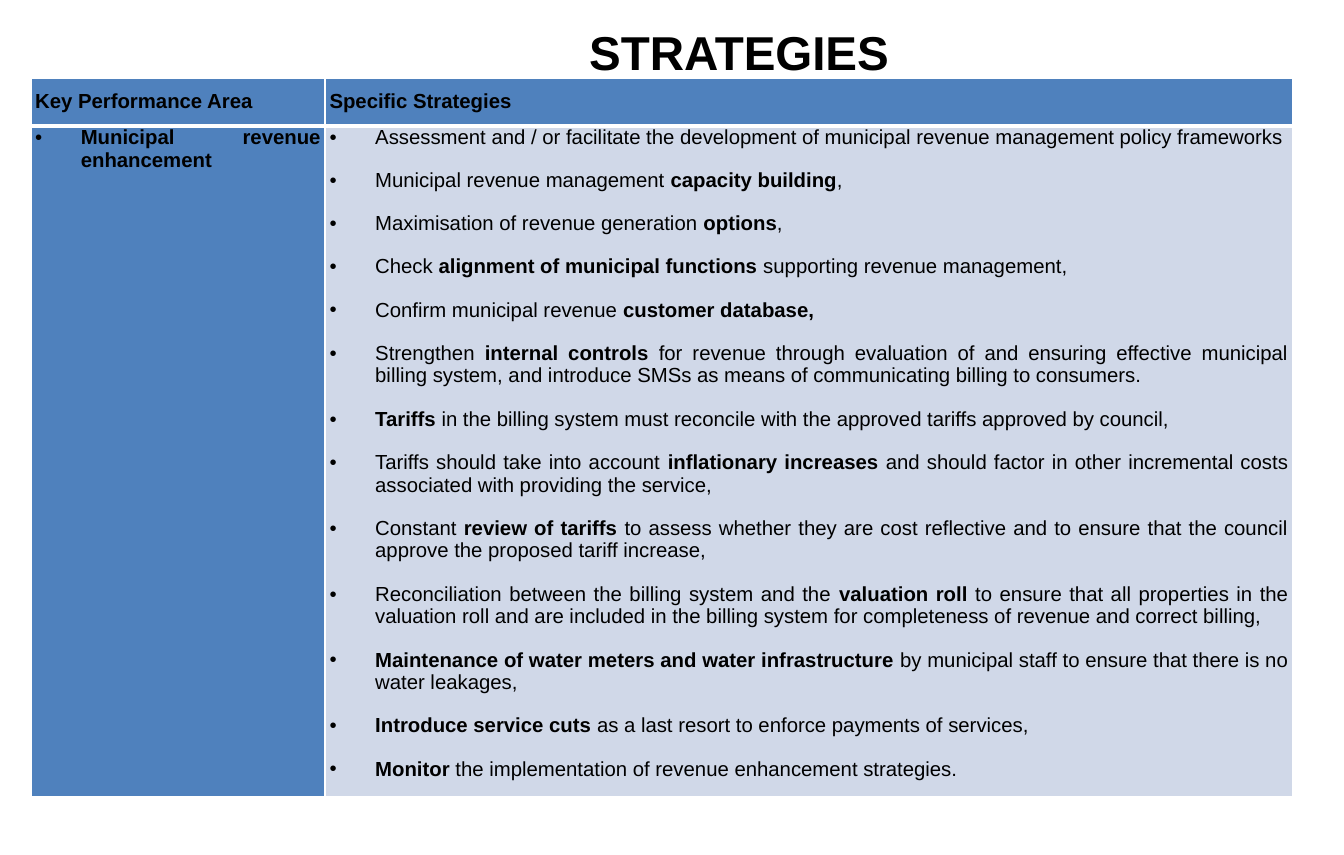
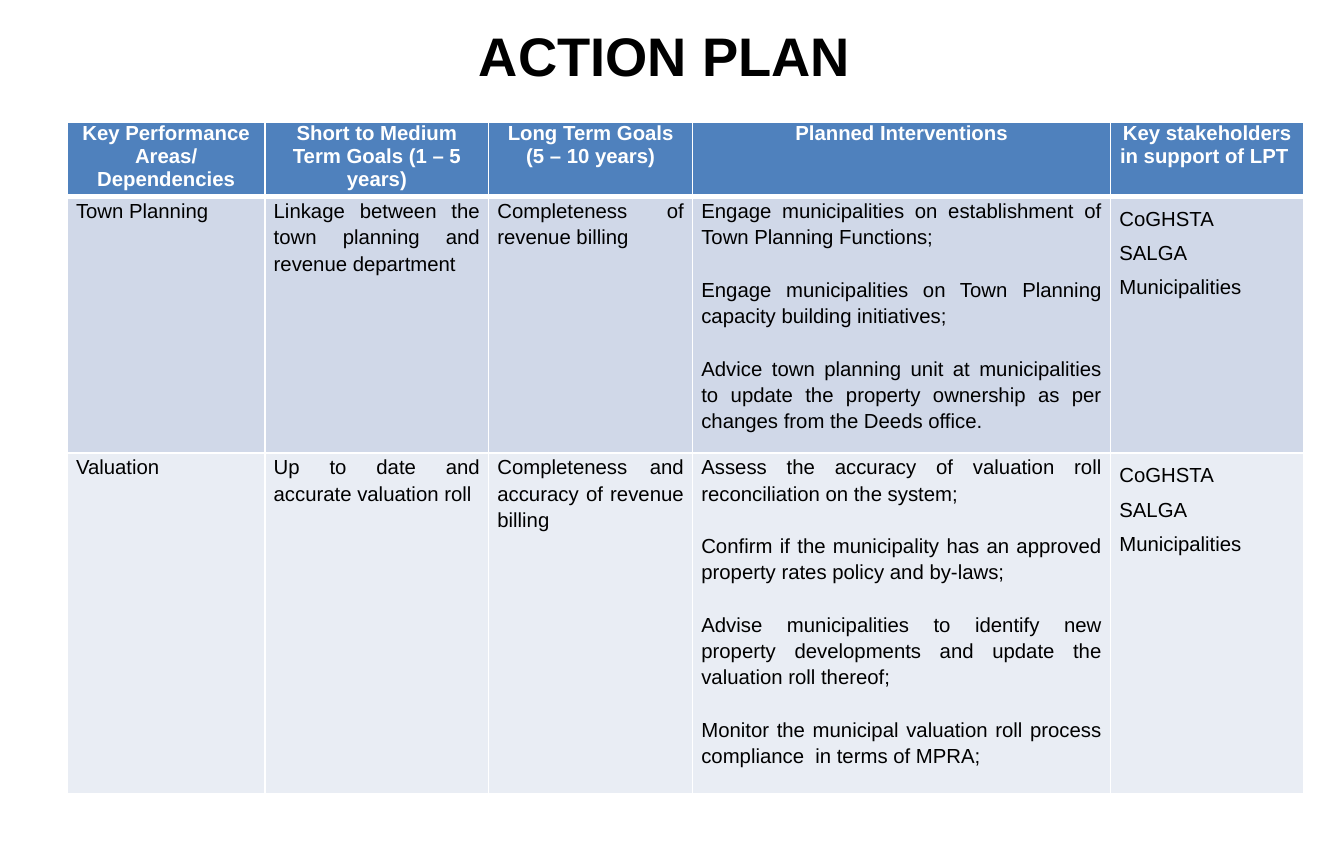
from pptx import Presentation
from pptx import util as u
from pptx.dml import color
from pptx.enum import text
from pptx.oxml import xmlchemy, ns
from lxml import etree

FONT = "Arial"
BLACK, WHITE = "000000", "FFFFFF"
HEADER, BAND, LIGHT_BAND = "4F81BD", "D0D8E8", "E9EDF4"
LEFT, CENTER, JUSTIFY = (text.PP_ALIGN.LEFT, text.PP_ALIGN.CENTER,
                         text.PP_ALIGN.JUSTIFY)
BODY_SIZE = 12

STRATEGIES = [
    "Assessment and / or facilitate the development of municipal revenue "
    "management policy frameworks",
    "Municipal revenue management **capacity building**,",
    "Maximisation of revenue generation **options**,",
    "Check **alignment of municipal functions** supporting revenue management, ",
    "Confirm municipal revenue **customer database,**",
    "Strengthen **internal controls **for revenue through evaluation of and "
    "ensuring effective municipal billing system, and introduce SMSs as means "
    "of communicating billing to consumers.",
    "**Tariffs** in the billing system must reconcile with the approved tariffs "
    "approved by council,",
    "Tariffs should take into account **inflationary increases **and should "
    "factor in other incremental costs associated with providing the service,",
    "Constant **review of tariffs **to assess whether they are cost reflective "
    "and to ensure that the council approve the proposed tariff increase,",
    "Reconciliation between the billing system and the **valuation roll **to "
    "ensure that all properties in the valuation roll and are included in the "
    "billing system for completeness of revenue and correct billing,",
    "**Maintenance of water meters and water infrastructure **by municipal "
    "staff to ensure that there is no water leakages,",
    "**Introduce service cuts **as a last resort to enforce payments of services,",
    "**Monitor **the implementation of revenue enhancement strategies. ",
]

PLAN_HEADS = [
    "Key Performance Areas/ Dependencies",
    "Short to Medium Term Goals (1 – 5 years)",
    "Long Term Goals (5 – 10 years)",
    "Planned Interventions",
    "Key stakeholders in support of LPT ",
]
STAKEHOLDERS = ["CoGHSTA ", "SALGA", "Municipalities"]
PLAN_ROWS = [
    (
        "Town Planning",
        "Linkage between the town planning and revenue department",
        "Completeness of revenue billing",
        [
            "Engage municipalities on establishment of Town Planning Functions;",
            "Engage municipalities on Town Planning capacity building initiatives;",
            "Advice town planning unit at municipalities to update the property "
            "ownership as per changes from the Deeds office.",
        ],
    ),
    (
        "Valuation",
        "Up to date and accurate valuation roll",
        "Completeness and accuracy of revenue billing",
        [
            "Assess the accuracy of valuation roll reconciliation on the system;",
            "Confirm if the municipality has an approved property rates policy "
            "and by-laws;",
            "Advise municipalities to identify new property developments and "
            "update the valuation roll thereof;",
            "Monitor the municipal valuation roll process compliance  in terms "
            "of MPRA;",
        ],
    ),
]


def rgb(value):
    return color.RGBColor.from_string(value)


def add_span(para, words, size, ink, bold):
    span = para.add_run()
    span.text = words
    font = span.font
    font.name, font.size, font.bold = FONT, u.Pt(size), bold
    font.color.rgb = rgb(ink)


def add_bullet(para, indent):
    props = para._p.get_or_add_pPr()
    props.set("marL", str(u.Cm(indent)))
    props.set("indent", str(-u.Cm(indent)))
    etree.SubElement(props, ns.qn("a:buFont")).set("typeface", FONT)
    etree.SubElement(props, ns.qn("a:buChar")).set("char", "•")


def set_borders(cell, top, bottom):
    props = cell._tc.get_or_add_tcPr()
    for side, width in (("L", 1), ("R", 1), ("T", top), ("B", bottom)):
        line = etree.SubElement(props, ns.qn("a:ln" + side), w=str(u.Pt(width)))
        fill = etree.SubElement(line, ns.qn("a:solidFill"))
        etree.SubElement(fill, ns.qn("a:srgbClr"), val=WHITE)


def fill_cell(cell, paras, fill, ink=BLACK, bold=False, align=JUSTIFY,
              spacing=1.0, gap=0, bullet=None):
    cell.fill.solid()
    cell.fill.fore_color.rgb = rgb(fill)
    paras = [paras] if isinstance(paras, str) else paras
    frame = cell.text_frame
    for number, words in enumerate(paras):
        para = frame.add_paragraph() if number else frame.paragraphs[0]
        if bullet:
            add_bullet(para, bullet)
        para.alignment = align
        para.line_spacing = spacing
        para.space_before = u.Pt(gap if number else 0)
        for index, part in enumerate(words.split("**")):
            if part:
                add_span(para, part, BODY_SIZE, ink, bold or index % 2 == 1)


def add_table(page, left, top, widths, heights, inset):
    frame = page.shapes.add_table(
        len(heights), len(widths), u.Cm(left), u.Cm(top),
        u.Cm(sum(widths)), u.Cm(sum(heights)))
    table = frame.table
    table.horz_banding = False
    for column, width in zip(table.columns, widths):
        column.width = u.Cm(width)
    for number, (row, height) in enumerate(zip(table.rows, heights)):
        row.height = u.Cm(height)
        for cell in row.cells:
            cell.margin_left = cell.margin_right = u.Cm(inset)
            cell.margin_top = cell.margin_bottom = 0
            set_borders(cell, 3 if number == 1 else 1, 3 if number == 0 else 1)
    return table


def add_page(deck, title, size, left, top, width, height):
    page = deck.slides.add_slide(deck.slide_layouts[5])
    box = page.shapes.title
    box.left, box.top = u.Cm(left), u.Cm(top)
    box.width, box.height = u.Cm(width), u.Cm(height)
    frame = box.text_frame
    frame.auto_size = text.MSO_AUTO_SIZE.NONE
    frame.vertical_anchor = text.MSO_ANCHOR.MIDDLE
    para = frame.paragraphs[0]
    para.alignment = CENTER
    add_span(para, title, size, BLACK, True)
    return page


def strategies_page(deck):
    page = add_page(deck, "STRATEGIES ", 28, 4.45, 0.43, 22.1, 1.27)
    table = add_table(page, 0.64, 1.63, [6.12, 20.12], [0.99, 13.94], 0.09)
    for column, head in enumerate(["Key Performance Area", "Specific Strategies "]):
        fill_cell(table.cell(0, column), head, HEADER, bold=True, spacing=1.5)
    fill_cell(table.cell(1, 0), "Municipal revenue enhancement ", HEADER,
              bold=True, bullet=0.95)
    fill_cell(table.cell(1, 1), STRATEGIES, BAND, gap=12, bullet=0.95)


def action_plan_page(deck):
    page = add_page(deck, "ACTION PLAN ", 32, 1.4, 0.2, 25.15, 1.9)
    table = add_table(page, 1.4, 2.54, [4.11, 4.65, 4.24, 8.69, 4.01],
                      [1.55, 5.33, 7.09], 0.18)
    for column, head in enumerate(PLAN_HEADS):
        fill_cell(table.cell(0, column), head, HEADER, WHITE, True, CENTER)
    for row, (entries, fill) in enumerate(zip(PLAN_ROWS, (BAND, LIGHT_BAND)), 1):
        for column, entry in enumerate(entries):
            fill_cell(table.cell(row, column), entry, fill, spacing=1.15, gap=15.5)
        fill_cell(table.cell(row, len(entries)), STAKEHOLDERS, fill, spacing=1.5)


def main():
    deck = Presentation()
    deck.slide_width, deck.slide_height = u.Cm(27.94), u.Cm(17.78)
    strategies_page(deck)
    action_plan_page(deck)
    deck.save("out.pptx")


if __name__ == "__main__":
    main()
